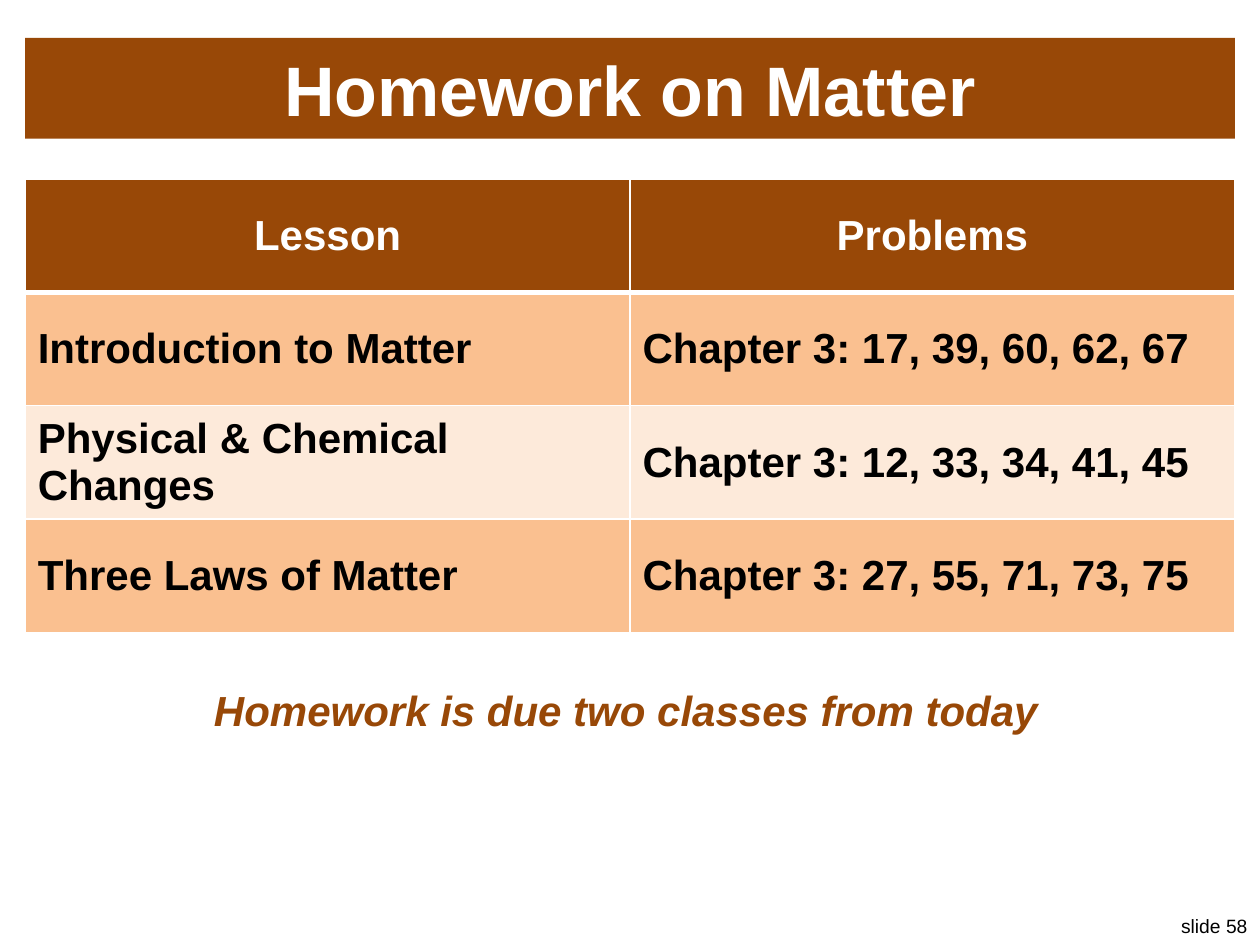
from pptx import Presentation
from pptx.dml.color import RGBColor
from pptx.enum.text import MSO_ANCHOR, MSO_AUTO_SIZE, PP_ALIGN
from pptx.oxml import parse_xml
from pptx.oxml.ns import nsdecls
from pptx.util import Inches, Pt

COLORS = {
    "brown": "984807",
    "orange": "FAC090",
    "cream": "FDEADA",
    "white": "FFFFFF",
    "black": "000000",
}
HOMEWORK = [
    ("Lesson", "Problems"),
    ("Introduction to Matter", "Chapter 3: 17, 39, 60, 62, 67"),
    ("Physical & Chemical Changes", "Chapter 3: 12, 33, 34, 41, 45"),
    ("Three Laws of Matter", "Chapter 3: 27, 55, 71, 73, 75"),
]


def write_text(frame, text, size=24, color="black", bold=True, italic=False,
               align=PP_ALIGN.LEFT):
    """Put one formatted paragraph into a text frame."""
    para = frame.paragraphs[0]
    para.alignment = align
    span = para.add_run()
    span.text = text
    span.font.name = "Arial"
    span.font.size = Pt(size)
    span.font.bold = bold
    span.font.italic = italic
    span.font.color.rgb = RGBColor.from_string(COLORS[color])


def paint(fill, color):
    """Give a fill one solid colour."""
    fill.solid()
    fill.fore_color.rgb = RGBColor.from_string(COLORS[color])


class SlideBuilder:
    """Hold the current slide and draw its elements in one style."""

    def __init__(self, page):
        """Keep the slide to draw on."""
        self.page = page

    def title(self, text, left, top, width, height):
        """Place the title as a filled banner."""
        banner = self.page.shapes.title
        banner.left, banner.top = Inches(left), Inches(top)
        banner.width, banner.height = Inches(width), Inches(height)
        paint(banner.fill, "brown")
        banner.text_frame.vertical_anchor = MSO_ANCHOR.MIDDLE
        write_text(banner.text_frame, text, size=40, color="white", align=PP_ALIGN.CENTER)

    def label(self, text, left, top, width, height, **style):
        """Add a single-line text box."""
        box = self.page.shapes.add_textbox(
            Inches(left), Inches(top), Inches(width), Inches(height))
        box.text_frame.word_wrap = False
        box.text_frame.auto_size = MSO_AUTO_SIZE.SHAPE_TO_FIT_TEXT
        write_text(box.text_frame, text, **style)

    def borders(self, cell, bottom, top):
        """Draw white lines around a cell."""
        properties = cell._tc.get_or_add_tcPr()
        for side, width in (("L", 1), ("R", 1), ("T", top), ("B", bottom)):
            properties.append(parse_xml(
                f'<a:ln{side} {nsdecls("a")} w="{Pt(width)}"><a:solidFill>'
                f'<a:srgbClr val="{COLORS["white"]}"/></a:solidFill></a:ln{side}>'))

    def table(self, rows, left, top, width, height):
        """Add a table with a header and banded rows."""
        grid = self.page.shapes.add_table(
            len(rows), len(rows[0]), Inches(left), Inches(top),
            Inches(width), Inches(height)).table
        for row, texts in enumerate(rows):
            header = row == 0
            fill = "brown" if header else ("cream", "orange")[row % 2]
            for column, text in enumerate(texts):
                cell = grid.cell(row, column)
                self.borders(cell, bottom=3 if header else 1, top=3 if row == 1 else 1)
                paint(cell.fill, fill)
                cell.vertical_anchor = MSO_ANCHOR.MIDDLE
                write_text(cell.text_frame, text,
                           color="white" if header else "black",
                           align=PP_ALIGN.CENTER if header else PP_ALIGN.LEFT)


def main():
    """Build the homework slide and save it."""
    deck = Presentation()
    deck.slide_width, deck.slide_height = Inches(10), Inches(7.5)
    builder = SlideBuilder(deck.slides.add_slide(deck.slide_layouts[5]))
    builder.label("slide 58", 9.25, 7.21, 0.75, 0.29, size=11, bold=False,
                  align=PP_ALIGN.RIGHT)
    builder.title("Homework on Matter", 0.2, 0.3, 9.6, 0.8)
    builder.table(HOMEWORK, 0.2, 1.42, 9.6, 3.6)
    builder.label("Homework is due two classes from today", 1.6, 5.38, 6.8, 0.5,
                  color="brown", italic=True)
    deck.save("out.pptx")


if __name__ == "__main__":
    main()
